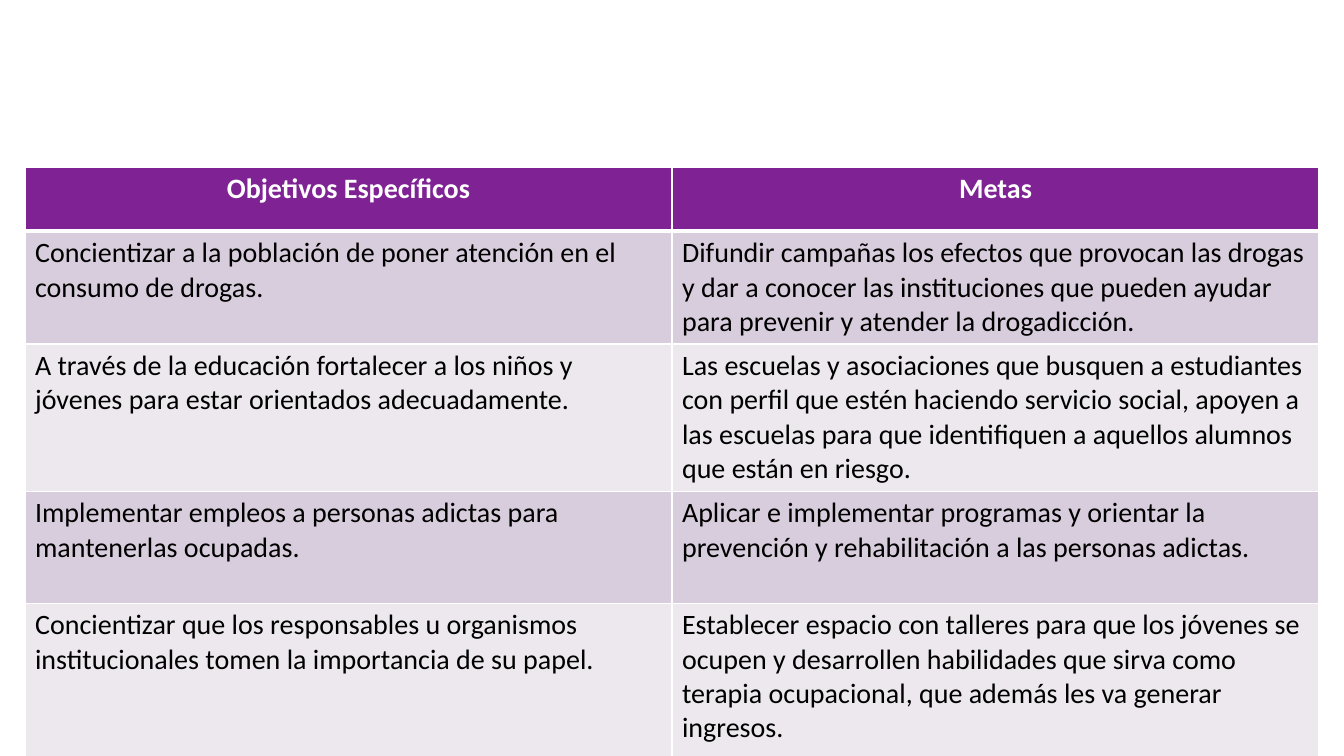
from lxml import etree
from pptx import Presentation
from pptx.dml.color import RGBColor
from pptx.enum.text import PP_ALIGN
from pptx.oxml.ns import qn
from pptx.util import Emu, Pt

CENTER, LEFT = PP_ALIGN.CENTER, PP_ALIGN.LEFT

PX = 914400 / 100.8
SLIDE_W, SLIDE_H = 1344, 756
TABLE_X, TABLE_Y = 25, 167
COL_W = 647
ROW_HEIGHTS = [64, 112, 112, 112, 161]

WHITE = RGBColor(0xFF, 0xFF, 0xFF)
BLACK = RGBColor(0x00, 0x00, 0x00)
PURPLE = RGBColor(0x7F, 0x22, 0x94)
BAND_DARK = RGBColor(0xD8, 0xCD, 0xDC)
BAND_LIGHT = RGBColor(0xEC, 0xE8, 0xEE)

HEADER_FONT = {"name": "Calibri", "size": Pt(20), "bold": True}
BODY_FONT = {**HEADER_FONT, "bold": False}
THIN, THICK = Pt(1), Pt(3)

ROWS = [
    ("Objetivos Específicos", "Metas"),
    ("Concientizar a la población de poner atención en el consumo de drogas.",
     "Difundir campañas los efectos que provocan las drogas y dar a conocer las "
     "instituciones que pueden ayudar para prevenir y atender la drogadicción."),
    ("A través de la educación fortalecer a los niños y jóvenes para estar "
     "orientados adecuadamente.",
     "Las escuelas y asociaciones que busquen a estudiantes con perfil que estén "
     "haciendo servicio social, apoyen a las escuelas para que identifiquen a "
     "aquellos alumnos que están en riesgo."),
    ("Implementar empleos a personas adictas para mantenerlas ocupadas.",
     "Aplicar e implementar programas y orientar la prevención y rehabilitación "
     "a las personas adictas."),
    ("Concientizar que los responsables u organismos institucionales tomen la "
     "importancia de su papel.",
     "Establecer espacio con talleres para que los jóvenes se ocupen y "
     "desarrollen habilidades que sirva como terapia ocupacional, que además "
     "les va generar ingresos."),
]


def px(n):
    return Emu(round(n * PX))


def set_borders(cell, top, bottom):
    """Draw white cell borders; must run before the fill is set."""
    tcPr = cell._tc.get_or_add_tcPr()
    widths = {"a:lnL": THIN, "a:lnR": THIN, "a:lnT": top, "a:lnB": bottom}
    for tag, width in widths.items():
        ln = etree.SubElement(tcPr, qn(tag), w=str(int(width)))
        fill = etree.SubElement(ln, qn("a:solidFill"))
        etree.SubElement(fill, qn("a:srgbClr"), val=str(WHITE))


def write_cell(cell, text, font, color, align):
    p = cell.text_frame.paragraphs[0]
    p.alignment = align
    r = p.add_run()
    r.text = text
    for name, value in font.items():
        setattr(r.font, name, value)
    r.font.color.rgb = color


def style_cell(cell, text, row):
    header = row == 0
    set_borders(cell, THICK if row == 1 else THIN, THICK if header else THIN)
    cell.fill.solid()
    if header:
        cell.fill.fore_color.rgb = PURPLE
        write_cell(cell, text, HEADER_FONT, WHITE, CENTER)
    else:
        cell.fill.fore_color.rgb = BAND_DARK if row % 2 else BAND_LIGHT
        write_cell(cell, text, BODY_FONT, BLACK, LEFT)


def add_goals_table(slide):
    n_cols = len(ROWS[0])
    table = slide.shapes.add_table(
        len(ROWS), n_cols, px(TABLE_X), px(TABLE_Y),
        px(n_cols * COL_W), px(sum(ROW_HEIGHTS))).table
    for col in table.columns:
        col.width = px(COL_W)
    for i, (texts, height) in enumerate(zip(ROWS, ROW_HEIGHTS)):
        table.rows[i].height = px(height)
        for j, text in enumerate(texts):
            style_cell(table.cell(i, j), text, i)


def main():
    prs = Presentation()
    prs.slide_width, prs.slide_height = px(SLIDE_W), px(SLIDE_H)
    slide = prs.slides.add_slide(prs.slide_layouts[6])
    add_goals_table(slide)
    prs.save("out.pptx")


if __name__ == "__main__":
    main()
